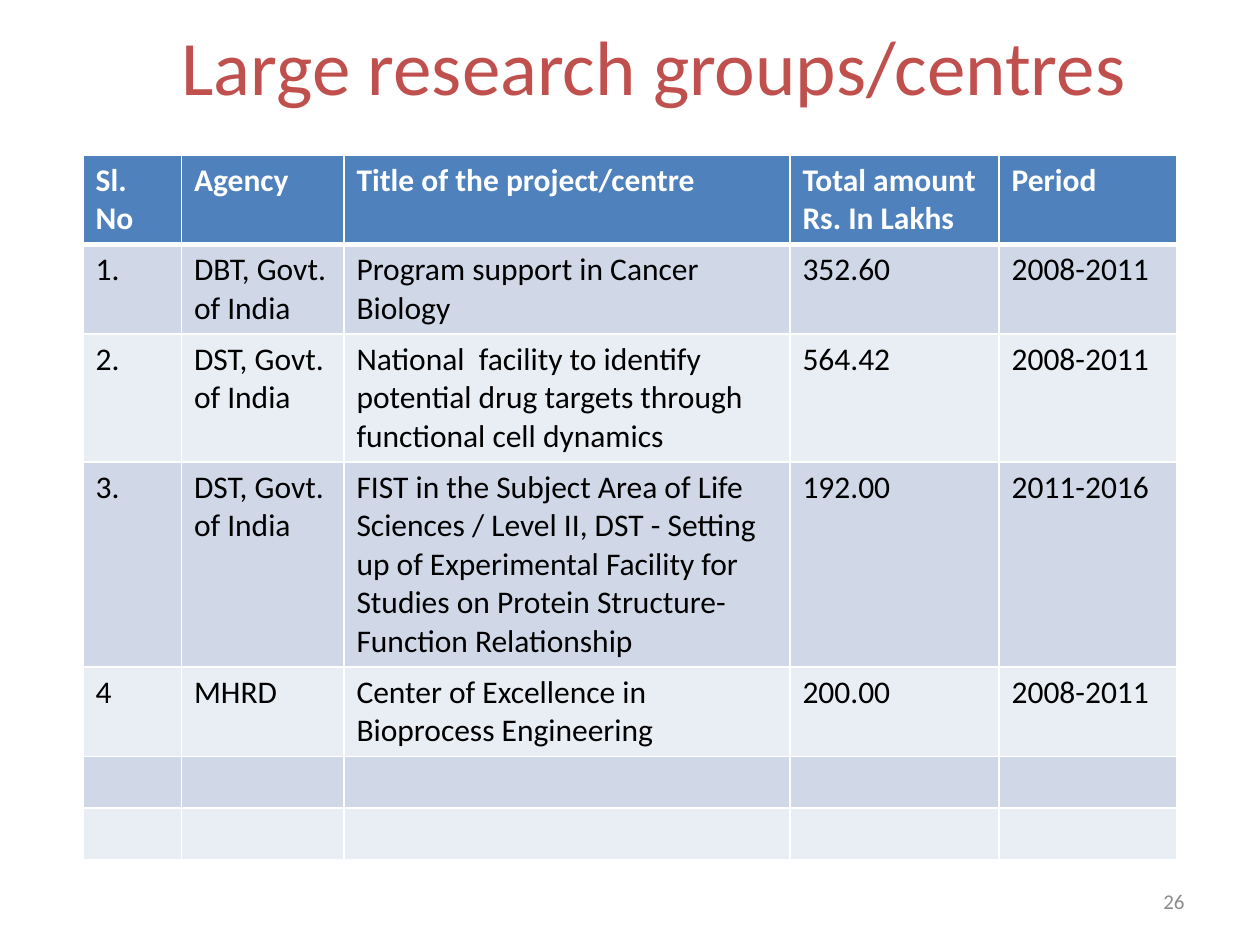
from lxml import etree
from pptx import Presentation
from pptx.dml.color import RGBColor
from pptx.enum.text import MSO_ANCHOR, PP_ALIGN
from pptx.oxml.ns import qn
from pptx.util import Inches, Pt

CENTER, RIGHT = PP_ALIGN.CENTER, PP_ALIGN.RIGHT
MIDDLE = MSO_ANCHOR.MIDDLE
TITLE_ONLY = 5

COLORS = {
    "title": "C0504D",
    "header": "4F81BD",
    "odd": "D0D8E8",
    "even": "E9EDF4",
    "white": "FFFFFF",
    "black": "000000",
    "number": "8C8C8C",
}

COLUMNS = [0.78, 1.29, 3.54, 1.66, 1.41]
ROW_HEIGHT = 0.41
ROWS = [
    ["Sl. No", "Agency", "Title of the project/centre", "Total amount\nRs. In Lakhs", "Period"],
    ["1.", "DBT, Govt. of India", "Program support in Cancer Biology", "352.60", "2008-2011"],
    ["2.", "DST, Govt. of India",
     "National  facility to identify potential drug targets through functional cell dynamics",
     "564.42", "2008-2011"],
    ["3.", "DST, Govt. of India",
     "FIST in the Subject Area of Life Sciences / Level II, DST - Setting up of "
     "Experimental Facility for Studies on Protein Structure-Function Relationship",
     "192.00", "2011-2016"],
    ["4", "MHRD", "Center of Excellence in Bioprocess Engineering", "200.00", "2008-2011"],
    [""] * 5,
    [""] * 5,
]


class SlideBuilder:
    font = "Calibri"

    def __init__(self, page):
        self.page = page

    def color(self, name):
        return RGBColor.from_string(COLORS[name])

    def add_text(self, frame, text, size, color, bold=False, align=None):
        frame.word_wrap = True
        for index, line in enumerate(text.split("\n")):
            para = frame.paragraphs[0] if index == 0 else frame.add_paragraph()
            para.alignment = align
            para.font.size = Pt(size)
            if line:
                span = para.add_run()
                span.text = line
                span.font.name = self.font
                span.font.size = Pt(size)
                span.font.bold = bold
                span.font.color.rgb = self.color(color)

    def title(self, text, left, top, width, height):
        box = self.page.shapes.title
        box.left, box.top = Inches(left), Inches(top)
        box.width, box.height = Inches(width), Inches(height)
        box.text_frame.vertical_anchor = MIDDLE
        self.add_text(box.text_frame, text, 44, "title", align=CENTER)

    def page_number(self, text, left, top, width, height):
        box = self.page.shapes.add_textbox(
            Inches(left), Inches(top), Inches(width), Inches(height))
        box.text_frame.vertical_anchor = MIDDLE
        self.add_text(box.text_frame, text, 12, "number", align=RIGHT)

    def borders(self, cell, widths):
        properties = cell._tc.get_or_add_tcPr()
        for side, width in widths.items():
            line = etree.SubElement(properties, qn(f"a:ln{side}"), w=str(Pt(width)))
            fill = etree.SubElement(line, qn("a:solidFill"))
            etree.SubElement(fill, qn("a:srgbClr"), val=COLORS["white"])

    def table(self, rows, columns, left, top):
        grid = self.page.shapes.add_table(
            len(rows), len(columns), Inches(left), Inches(top),
            Inches(sum(columns)), Inches(ROW_HEIGHT * len(rows))).table
        for column, width in zip(grid.columns, columns):
            column.width = Inches(width)
        for row_index, values in enumerate(rows):
            header = row_index == 0
            fill = "header" if header else "odd" if row_index % 2 else "even"
            widths = {"L": 1, "R": 1, "T": 3 if row_index == 1 else 1, "B": 3 if header else 1}
            for column_index, value in enumerate(values):
                cell = grid.cell(row_index, column_index)
                self.borders(cell, widths)
                cell.fill.solid()
                cell.fill.fore_color.rgb = self.color(fill)
                self.add_text(cell.text_frame, value, 18, "white" if header else "black", bold=header)


def main():
    deck = Presentation()
    deck.slide_width, deck.slide_height = Inches(10), Inches(7.5)
    builder = SlideBuilder(deck.slides.add_slide(deck.slide_layouts[TITLE_ONLY]))
    builder.table(ROWS, COLUMNS, 0.66, 1.23)
    builder.title("Large research groups/centres", 1.08, 0.04, 8.22, 0.94)
    builder.page_number("26", 7.17, 6.95, 2.33, 0.4)
    deck.save("out.pptx")


if __name__ == "__main__":
    main()
